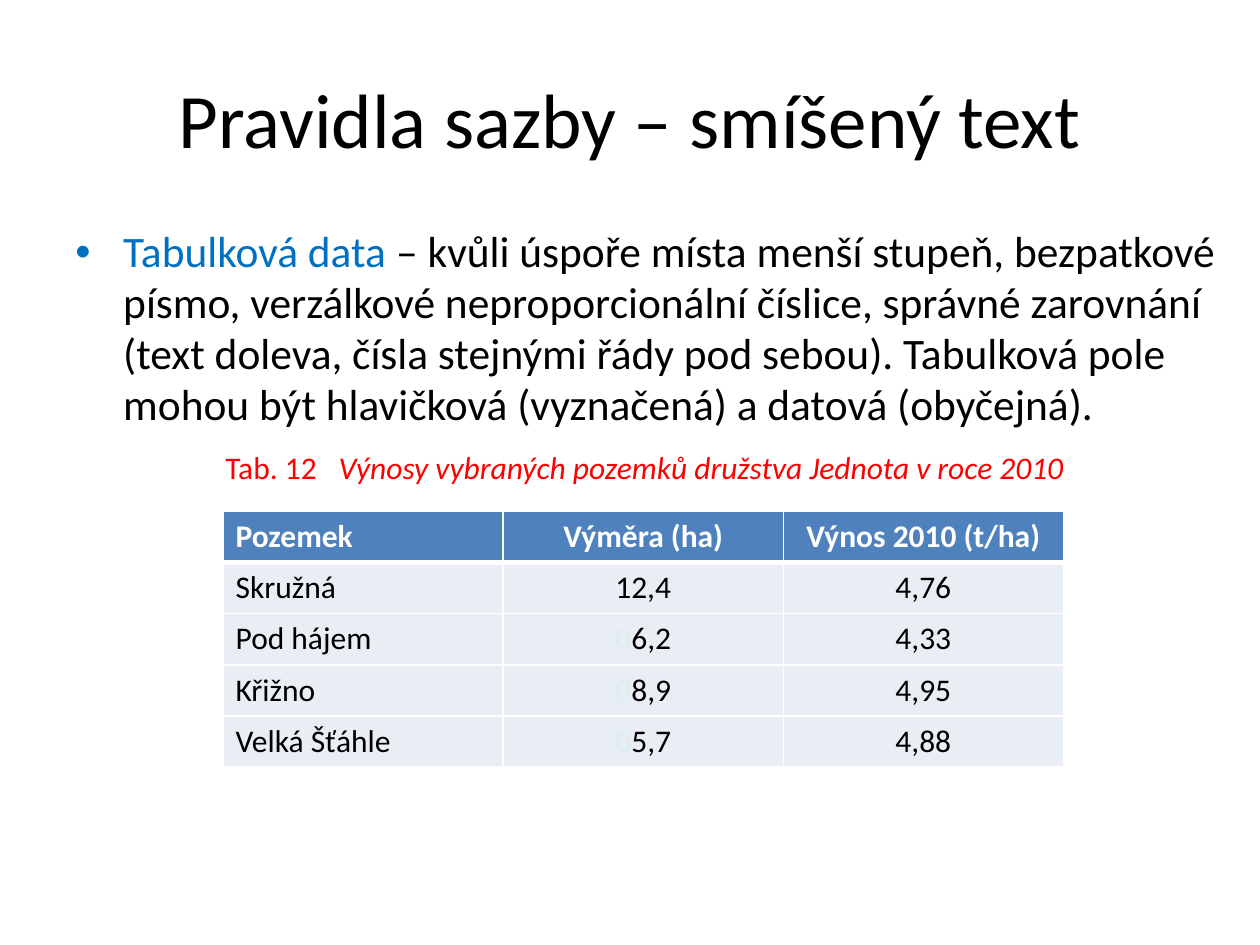
from typing import NamedTuple

from lxml.etree import SubElement
from pptx import Presentation
from pptx.dml.color import RGBColor
from pptx.enum.text import MSO_ANCHOR, PP_ALIGN
from pptx.oxml.ns import qn
from pptx.util import Emu, Inches, Pt

WIDE, HIGH = Inches(10), Inches(7.5)
BLACK, WHITE, BLUE, RED = "000000", "FFFFFF", "0070C0", "FF0000"
HEAD, BAND, GHOST = "4F81BD", "E9EDF4", "DBEEF4"


class Box(NamedTuple):
    """A place given as shares of the slide's size."""
    left: float
    top: float
    width: float
    height: float

    def scale(self) -> list[Emu]:
        """Return the place as lengths."""
        return [Emu(int(part * side)) for part, side in zip(self, (WIDE, HIGH) * 2)]


class Run(NamedTuple):
    """A piece of text with its own colour and slant."""
    text: str
    color: str = BLACK
    slant: bool = False


class Row(NamedTuple):
    """A line of the table: field, area and yield."""
    field: str
    area: str
    crop: str


ROWS = [
    Row("Pozemek", "Výměra (ha)", "Výnos 2010 (t/ha)"),
    Row("Skružná", "12,4", "4,76"),
    Row("Pod hájem", "06,2", "4,33"),
    Row("Křižno", "08,9", "4,95"),
    Row("Velká Šťáhle", "05,7", "4,88"),
]


def paint(code: str) -> RGBColor:
    """Turn a hex string into a colour."""
    return RGBColor.from_string(code)


def write(frame, runs: list[Run], *, size: float = 18, bold: bool = False,
          align=PP_ALIGN.LEFT, anchor=MSO_ANCHOR.TOP, lead: float = 1,
          before: float = 0, hang: float = 0, mark: str = "", tab: float = 0) -> None:
    """Fill a text frame with one paragraph of runs."""
    frame.word_wrap = True
    frame.vertical_anchor = anchor
    para = frame.paragraphs[0]
    para.alignment, para.line_spacing, para.space_before = align, lead, Pt(before)
    for item in runs:
        run = para.add_run()
        run.text = item.text
        font = run.font
        font.name, font.size, font.bold, font.italic = "Calibri", Pt(size), bold, item.slant
        font.color.rgb = paint(item.color)
    props = para._p.get_or_add_pPr()
    if mark:
        props.set("marL", str(Inches(hang)))
        props.set("indent", str(-Inches(hang)))
        SubElement(props, qn("a:buFont"), typeface="Arial")
        SubElement(props, qn("a:buChar"), char=mark)
    if tab:
        stops = SubElement(props, qn("a:tabLst"))
        SubElement(stops, qn("a:tab"), pos=str(Inches(tab)), algn="l")


def place(slide, box: Box, runs: list[Run], **form) -> None:
    """Add a text box."""
    write(slide.shapes.add_textbox(*box.scale()).text_frame, runs, **form)


def edge(cell, low: float) -> None:
    """Draw white borders round a cell, the bottom one with its own width."""
    props = cell._tc.get_or_add_tcPr()
    for spot, (side, width) in enumerate(zip("LRTB", (1, 1, 1, low))):
        line = SubElement(props, qn(f"a:ln{side}"), w=str(Pt(width)))
        fill = SubElement(line, qn("a:solidFill"))
        SubElement(fill, qn("a:srgbClr"), val=WHITE)
        props.insert(spot, line)


def split(text: str, color: str) -> list[Run]:
    """Set a leading zero in a pale colour that only keeps the digits aligned."""
    if text.startswith("0"):
        return [Run("0", GHOST), Run(text[1:], color)]
    return [Run(text, color)]


def chart(slide, box: Box, rows: list[Row]) -> None:
    """Add the table of fields."""
    grid = slide.shapes.add_table(len(rows), len(Row._fields), *box.scale()).table
    for r, row in enumerate(rows):
        top = r == 0
        for c, text in enumerate(row):
            cell = grid.cell(r, c)
            cell.fill.solid()
            cell.fill.fore_color.rgb = paint(HEAD if top else BAND)
            edge(cell, 3 if top else 1)
            write(cell.text_frame, split(text, WHITE if top else BLACK), bold=top,
                  align=PP_ALIGN.CENTER if c else PP_ALIGN.LEFT)


def main() -> None:
    """Build the slide."""
    deck = Presentation()
    deck.slide_width, deck.slide_height = WIDE, HIGH
    slide = deck.slides.add_slide(deck.slide_layouts[6])
    place(slide, Box(0.05, 0.04, 0.9, 0.17), [Run("Pravidla sazby – smíšený text")],
          size=44, align=PP_ALIGN.CENTER, anchor=MSO_ANCHOR.MIDDLE)
    rule = (" – kvůli úspoře místa menší stupeň, bezpatkové písmo, verzálkové "
            "neproporcionální číslice, správné zarovnání (text doleva, čísla stejnými "
            "řády pod sebou). Tabulková pole mohou být hlavičková (vyznačená) a datová "
            "(obyčejná).")
    place(slide, Box(0.05, 0.233, 0.93, 0.193), [Run("Tabulková data", BLUE), Run(rule)],
          size=24.8, lead=0.98, before=5, hang=0.38, mark="•")
    chart(slide, Box(0.177, 0.541, 0.667, 0.271), ROWS)
    place(slide, Box(0.169, 0.468, 0.697, 0.053),
          [Run("Tab. 12\t", RED),
           Run("Výnosy vybraných pozemků družstva Jednota v roce 2010", RED, True)], tab=0.9)
    deck.save("out.pptx")


if __name__ == "__main__":
    main()
